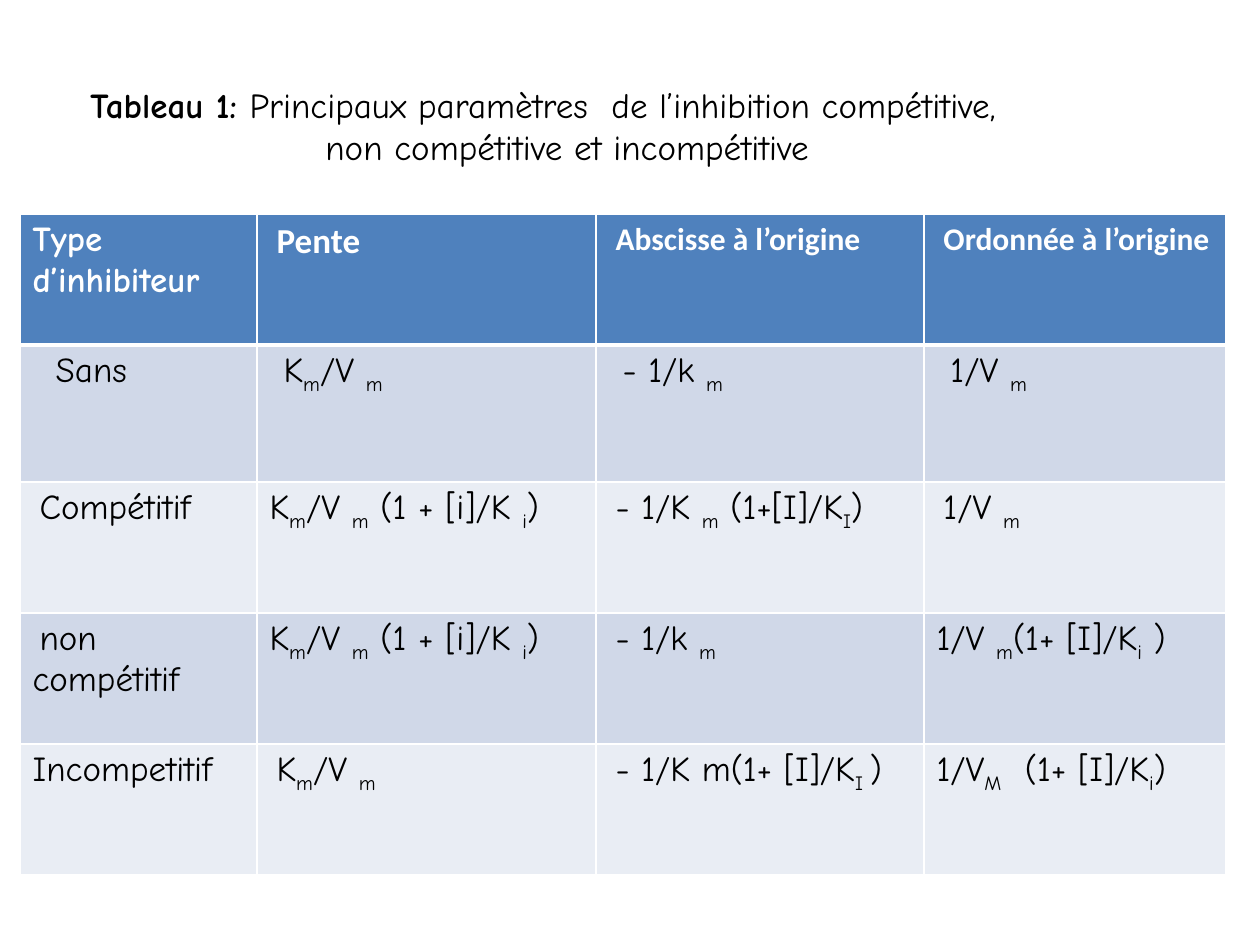
from dataclasses import dataclass

from lxml.etree import SubElement
from pptx import Presentation
from pptx.dml.color import RGBColor as Rgb
from pptx.oxml.ns import qn
from pptx.util import Pt

PX = 7258
SLIDE_SIZE = (1260, 945)
TABLE_ORIGIN = (20, 214)
COLUMN_WIDTHS = [237, 339, 328, 302]
ROW_HEIGHTS = [131, 137, 131, 131, 131]
CAPTION_BOX = (78, 77, 1102, 97)
SUBSCRIPT = "~"
COMIC, CALIBRI = "Comic Neue", "Calibri"
COLORS = {
    "black": "000000",
    "white": "FFFFFF",
    "header": "4F81BD",
    "odd": "D0D8E8",
    "even": "E9EDF4",
}


@dataclass(frozen=True)
class Entry:
    text: str
    indent: int = 0
    font: str = COMIC
    size: int = 20


SLOPE = "K~m~/V ~m~"
SLOPE_WITH_FACTOR = "K~m~/V ~m~ (1 + [i]/K ~i~)"
HEADER = [
    Entry("Type d’inhibiteur"),
    Entry("Pente", 7, CALIBRI),
    Entry("Abscisse à l’origine", 7, CALIBRI, 18),
    Entry("Ordonnée à l’origine", 7, CALIBRI, 18),
]
INHIBITORS = [
    [Entry("Sans", 23), Entry(SLOPE, 14), Entry("- 1/k ~m~", 14), Entry("1/V ~m~", 14)],
    [Entry("Compétitif", 7), Entry(SLOPE_WITH_FACTOR),
     Entry("- 1/K ~m~ (1+[I]/K~I~)", 7), Entry("1/V ~m~", 7)],
    [Entry("non compétitif", 7), Entry(SLOPE_WITH_FACTOR),
     Entry("- 1/k ~m~", 7), Entry("1/V ~m~(1+ [I]/K~i~ )")],
    [Entry("Incompetitif"), Entry(SLOPE, 7),
     Entry("- 1/K m(1+ [I]/K~I ~)", 7), Entry("1/V~M~  (1+ [I]/K~i~)")],
]


def write(paragraph, text: str, *, font: str = COMIC, size: int = 20,
          color: str = "black", bold: bool = False, indent: int = 0) -> None:
    if indent:
        paragraph._p.get_or_add_pPr().set("indent", str(indent * PX))
    for position, piece in enumerate(text.split(SUBSCRIPT)):
        if not piece:
            continue
        run = paragraph.add_run()
        run.text = piece
        run.font.name = font
        run.font.size = Pt(size)
        run.font.bold = bold
        run.font.color.rgb = Rgb.from_string(COLORS[color])
        if position % 2:
            run._r.get_or_add_rPr().set("baseline", "-25000")


def draw_borders(cell, widths: dict[str, int]) -> None:
    properties = cell._tc.get_or_add_tcPr()
    for side, width in widths.items():
        line = SubElement(properties, qn(f"a:ln{side}"), w=str(Pt(width)))
        fill = SubElement(line, qn("a:solidFill"))
        SubElement(fill, qn("a:srgbClr"), val=COLORS["white"])


def draw_table(slide) -> None:
    rows = [HEADER, *INHIBITORS]
    left, top = TABLE_ORIGIN
    table = slide.shapes.add_table(
        len(rows), len(HEADER), left * PX, top * PX,
        sum(COLUMN_WIDTHS) * PX, sum(ROW_HEIGHTS) * PX).table
    for column, width in zip(table.columns, COLUMN_WIDTHS):
        column.width = width * PX
    for row_index, (entries, height) in enumerate(zip(rows, ROW_HEIGHTS)):
        table.rows[row_index].height = height * PX
        is_header = row_index == 0
        background = "header" if is_header else "odd" if row_index % 2 else "even"
        borders = {"L": 1, "R": 1, "T": 3 if row_index == 1 else 1,
                   "B": 3 if is_header else 1}
        for column_index, entry in enumerate(entries):
            cell = table.cell(row_index, column_index)
            draw_borders(cell, borders)
            cell.fill.solid()
            cell.fill.fore_color.rgb = Rgb.from_string(COLORS[background])
            write(cell.text_frame.paragraphs[0], entry.text, font=entry.font,
                  size=entry.size, color="white" if is_header else "black",
                  bold=is_header, indent=entry.indent)


def draw_caption(slide) -> None:
    caption = slide.shapes.add_textbox(*(n * PX for n in CAPTION_BOX)).text_frame
    caption.word_wrap = True
    first_line = caption.paragraphs[0]
    write(first_line, "Tableau 1: ", bold=True)
    write(first_line, "Principaux paramètres  de l’inhibition compétitive,")
    write(caption.add_paragraph(), "non compétitive et incompétitive", indent=235)


def main() -> None:
    deck = Presentation()
    deck.slide_width, deck.slide_height = (n * PX for n in SLIDE_SIZE)
    slide = deck.slides.add_slide(deck.slide_layouts[6])
    draw_table(slide)
    draw_caption(slide)
    deck.save("out.pptx")


if __name__ == "__main__":
    main()
